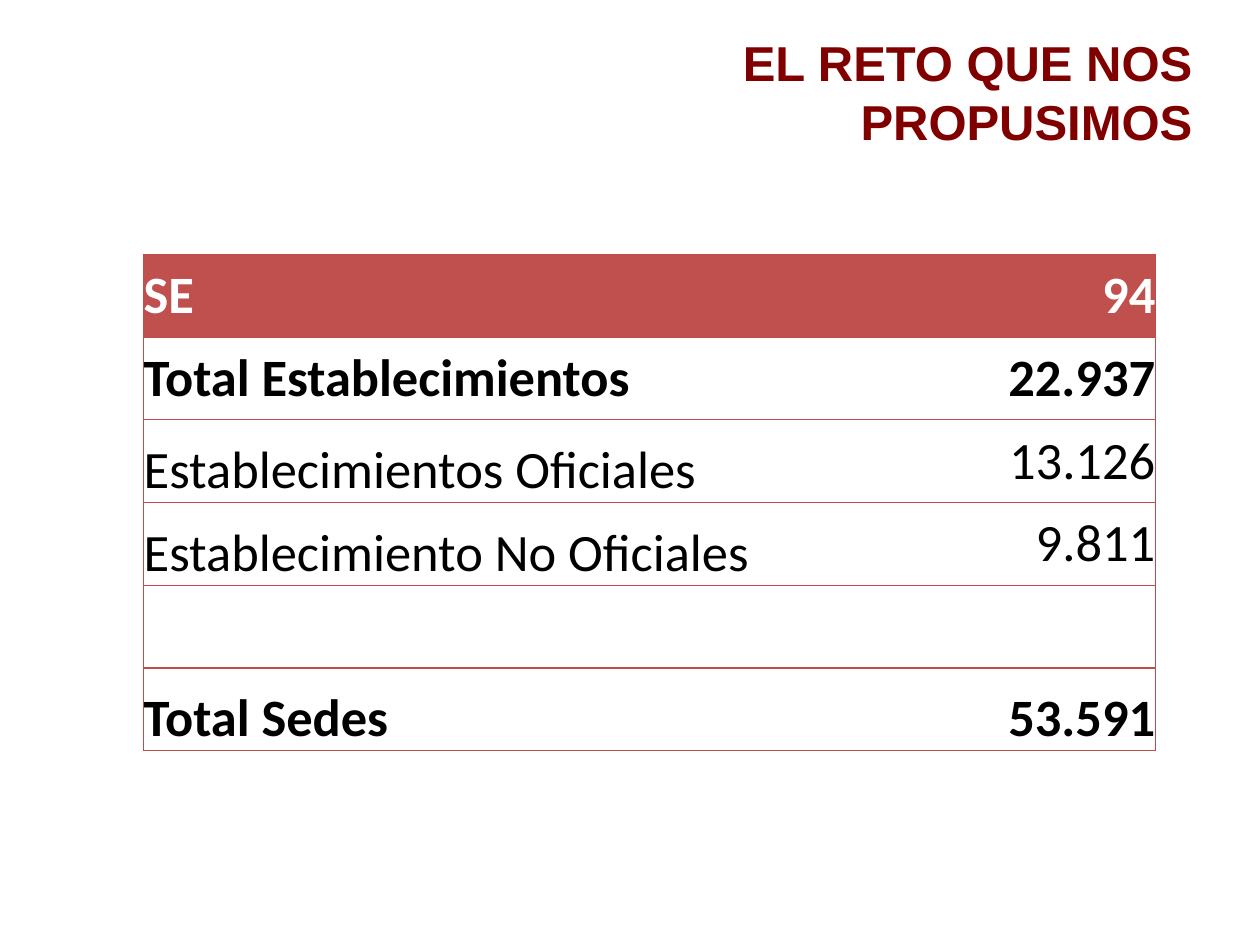
from lxml import etree
from pptx import Presentation
from pptx.dml.color import RGBColor
from pptx.enum.text import MSO_ANCHOR as Anchor, PP_ALIGN as Align
from pptx.oxml.ns import qn
from pptx.util import Inches, Pt

COLORS = {
    "title": "800000",
    "header": "C0504D",
    "border": "BF4C48",
    "white": "FFFFFF",
    "black": "000000",
}

# Label, value, bold, label anchor, value anchor
ROWS = [
    ("SE", "94", True, Anchor.MIDDLE, Anchor.MIDDLE),
    ("Total Establecimientos", "22.937", True, Anchor.MIDDLE, Anchor.MIDDLE),
    ("Establecimientos Oficiales", "13.126", False, Anchor.BOTTOM, Anchor.MIDDLE),
    ("Establecimiento No Oficiales", "9.811", False, Anchor.BOTTOM, Anchor.MIDDLE),
    ("", "", False, Anchor.MIDDLE, Anchor.MIDDLE),
    ("Total Sedes", "53.591", True, Anchor.BOTTOM, Anchor.BOTTOM),
]
LABEL_SHARE = 0.67


def color(name):
    return RGBColor.from_string(COLORS[name])


def style_font(para, name, size, bold, color_name):
    font = para.font
    font.name, font.size, font.bold = name, Pt(size), bold
    font.color.rgb = color(color_name)


def set_borders(cell, sides):
    """Draw the named sides (L, R, T, B) and hide the others."""
    props = cell._tc.get_or_add_tcPr()
    for side in "LRTB":
        line = etree.SubElement(props, qn(f"a:ln{side}"), w=str(Pt(0.75)))
        if side in sides:
            fill = etree.SubElement(line, qn("a:solidFill"))
            etree.SubElement(fill, qn("a:srgbClr"), val=COLORS["border"])
        else:
            etree.SubElement(line, qn("a:noFill"))


def add_title(page, left, top, width, height):
    box = page.shapes.add_textbox(left, top, width, height)
    box.text_frame.word_wrap = True
    para = box.text_frame.paragraphs[0]
    para.text = "EL RETO QUE NOS PROPUSIMOS"
    para.alignment = Align.RIGHT
    style_font(para, "Arial", 28, True, "title")


def add_totals_table(page, left, top, width, height):
    table = page.shapes.add_table(len(ROWS), 2, left, top, width, height).table
    table.columns[0].width = int(width * LABEL_SHARE)
    table.columns[1].width = width - table.columns[0].width

    for r, (label, value, bold, label_anchor, value_anchor) in enumerate(ROWS):
        fill, ink = ("header", "white") if r == 0 else ("white", "black")
        parts = [
            (label, Align.LEFT, label_anchor, "LTB"),
            (value, Align.RIGHT, value_anchor, "RTB"),
        ]
        for c, (text, align, anchor, sides) in enumerate(parts):
            cell = table.cell(r, c)
            set_borders(cell, sides)
            cell.fill.solid()
            cell.fill.fore_color.rgb = color(fill)
            cell.margin_left = cell.margin_right = 0
            cell.margin_top = cell.margin_bottom = 0
            cell.vertical_anchor = anchor
            para = cell.text_frame.paragraphs[0]
            para.text = text
            para.alignment = align
            style_font(para, "Calibri", 30, bold, ink)


def main():
    deck = Presentation()
    deck.slide_width, deck.slide_height = Inches(10), Inches(7.5)
    page = deck.slides.add_slide(deck.slide_layouts[6])
    add_totals_table(page, Inches(1.14), Inches(2.02), Inches(8.03), Inches(3.94))
    add_title(page, Inches(5.47), Inches(0.21), Inches(4.09), Inches(1.04))
    deck.save("out.pptx")


if __name__ == "__main__":
    main()
